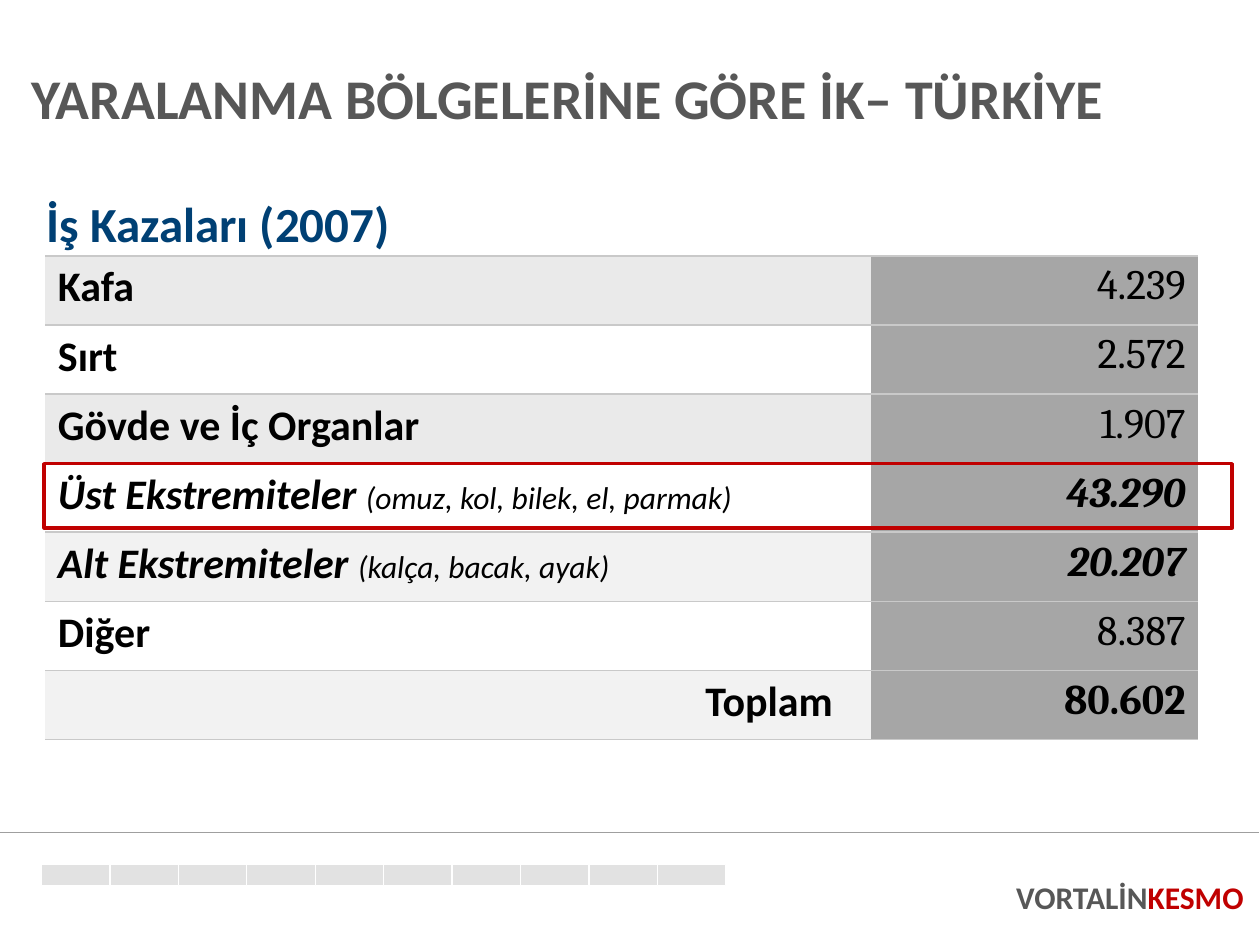
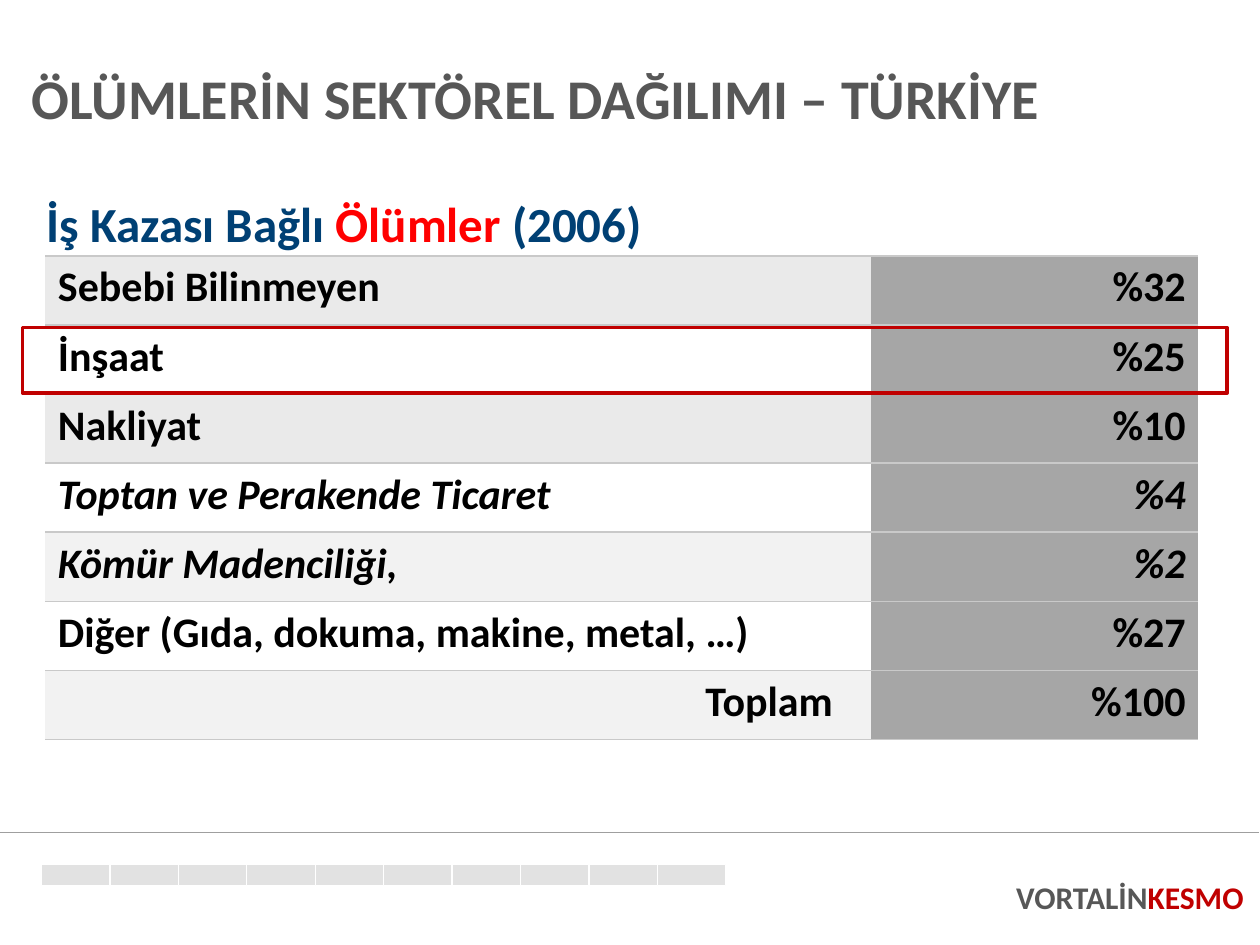
"""Builds two table slides on work accidents in Türkiye."""
from dataclasses import dataclass
from functools import partial

from lxml.etree import SubElement
from pptx import Presentation
from pptx.dml.color import RGBColor
from pptx.enum.shapes import MSO_CONNECTOR, MSO_SHAPE
from pptx.enum.text import MSO_ANCHOR, PP_ALIGN
from pptx.oxml import parse_xml
from pptx.oxml.ns import nsdecls, qn
from pptx.slide import Slide
from pptx.table import _Cell
from pptx.text.text import _Paragraph
from pptx.util import Inches, Pt


@dataclass(frozen=True)
class Theme:
    sans: str = "Calibri"
    serif: str = "Cambria"
    gray: str = "575757"
    navy: str = "004074"
    red: str = "C00000"
    bright_red: str = "FF0000"
    black: str = "000000"
    white: str = "FFFFFF"
    band: str = "EAEAEA"
    pale_band: str = "F2F2F2"
    value_fill: str = "A6A6A6"
    border: str = "C9C9C9"
    rule: str = "9F9F9F"
    block: str = "E2E2E2"
    title_size: int = 32
    heading_size: int = 28
    cell_size: int = 24
    small_size: int = 18


THEME = Theme()


@dataclass(frozen=True)
class Span:
    text: str
    size: int = THEME.cell_size
    color: str = THEME.black
    bold: bool = True
    italic: bool = False
    font: str = THEME.sans


@dataclass(frozen=True)
class Row:
    label: list[Span]
    value: Span


@dataclass(frozen=True)
class Box:
    left: float
    top: float
    width: float
    height: float

    def emu(self) -> tuple[int, ...]:
        return tuple(Inches(n) for n in (self.left, self.top, self.width, self.height))


@dataclass(frozen=True)
class TableSlide:
    title: str
    heading: list[Span]
    rows: list[Row]
    highlight: Box


TITLE_BOX = Box(0.25, 0.45, 9.64, 0.71)
HEADING_BOX = Box(0.27, 1.49, 5.19, 0.57)
TABLE_BOX = Box(0.36, 2.03, 9.15, 3.84)
SIGNATURE_BOX = Box(7.56, 6.97, 2.31, 0.56)
COLUMNS = (6.55, 2.6)
BLOCK_COUNT = 10
BLOCKS_BOX = Box(0.33, 6.86, 5.43, 0.17)
BAND_FILLS = (THEME.band, THEME.white, THEME.band, THEME.white,
              THEME.pale_band, THEME.white, THEME.pale_band)

Heading = partial(Span, size=THEME.heading_size, color=THEME.navy)
Number = partial(Span, bold=False, font=THEME.serif)
Emphasis = partial(Span, italic=True)
Detail = partial(Span, size=THEME.small_size, bold=False, italic=True)
Signature = partial(Span, size=THEME.small_size, color=THEME.gray)

SLIDES = [
    TableSlide(
        "YARALANMA BÖLGELERİNE GÖRE İK– TÜRKİYE",
        [Heading("İş Kazaları (2007)")],
        [
            Row([Span("Kafa")], Number("4.239")),
            Row([Span("Sırt")], Number("2.572")),
            Row([Span("Gövde ve İç Organlar")], Number("1.907")),
            Row([Emphasis("Üst Ekstremiteler "), Detail("(omuz, kol, bilek, el, parmak)")],
                Number("43.290", bold=True, italic=True)),
            Row([Emphasis("Alt Ekstremiteler "), Detail("(kalça, bacak, ayak)")],
                Number("20.207", bold=True, italic=True)),
            Row([Span("Diğer")], Number("8.387")),
            Row([Span("Toplam")], Number("80.602", bold=True)),
        ],
        Box(0.35, 3.68, 9.43, 0.51),
    ),
    TableSlide(
        "ÖLÜMLERİN SEKTÖREL DAĞILIMI – TÜRKİYE",
        [Heading("İş Kazası Bağlı "), Heading("Ölümler", color=THEME.bright_red),
         Heading(" (2006)")],
        [
            Row([Span("Sebebi Bilinmeyen")], Span("%32")),
            Row([Span("İnşaat")], Span("%25")),
            Row([Span("Nakliyat")], Span("%10")),
            Row([Emphasis("Toptan ve Perakende Ticaret")], Emphasis("%4")),
            Row([Emphasis("Kömür Madenciliği,")], Emphasis("%2")),
            Row([Span("Diğer (Gıda, dokuma, makine, metal, …)")], Span("%27")),
            Row([Span("Toplam")], Span("%100")),
        ],
        Box(0.18, 2.6, 9.56, 0.52),
    ),
]


def rgb(color: str) -> RGBColor:
    return RGBColor.from_string(color)


def add_runs(p: _Paragraph, spans: list[Span], align: PP_ALIGN = PP_ALIGN.LEFT) -> None:
    p.alignment = align
    for span in spans:
        r = p.add_run()
        r.text = span.text
        r.font.name = span.font
        r.font.size = Pt(span.size)
        r.font.bold = span.bold
        r.font.italic = span.italic
        r.font.color.rgb = rgb(span.color)


def add_text(s: Slide, box: Box, spans: list[Span], align: PP_ALIGN = PP_ALIGN.LEFT,
             inset: bool = True) -> None:
    tf = s.shapes.add_textbox(*box.emu()).text_frame
    tf.word_wrap = True
    if not inset:
        tf.margin_left = tf.margin_right = tf.margin_top = tf.margin_bottom = 0
    add_runs(tf.paragraphs[0], spans, align)


def add_rect(s: Slide, box: Box, fill: str | None, line: str, width: float) -> None:
    sp = s.shapes.add_shape(MSO_SHAPE.RECTANGLE, *box.emu())
    sp.shadow.inherit = False
    if fill:
        sp.fill.solid()
        sp.fill.fore_color.rgb = rgb(fill)
    else:
        sp.fill.background()
    sp.line.color.rgb = rgb(line)
    sp.line.width = Pt(width)


def add_title(s: Slide, text: str) -> None:
    sp = s.shapes.title
    sp.left, sp.top, sp.width, sp.height = TITLE_BOX.emu()
    tf = sp.text_frame
    tf.word_wrap = True
    tf.vertical_anchor = MSO_ANCHOR.MIDDLE
    tf.margin_left = tf.margin_right = 0
    p = tf.paragraphs[0]
    p.line_spacing = 0.9
    add_runs(p, [Span(text, THEME.title_size, THEME.gray)])


def add_footer(s: Slide) -> None:
    pitch = BLOCKS_BOX.width / BLOCK_COUNT
    for i in range(BLOCK_COUNT):
        block = Box(BLOCKS_BOX.left + i * pitch, BLOCKS_BOX.top, pitch, BLOCKS_BOX.height)
        add_rect(s, block, THEME.block, THEME.white, 0.75)
    rule = s.shapes.add_connector(MSO_CONNECTOR.STRAIGHT, 0, Inches(6.61),
                                  Inches(9.99), Inches(6.61))
    rule.line.color.rgb = rgb(THEME.rule)
    rule.line.width = Pt(0.75)
    SubElement(rule._element.spPr, qn("a:effectLst"))
    add_text(s, SIGNATURE_BOX, [Signature("VORTALİN"), Signature("KESMO", color=THEME.red)],
             PP_ALIGN.RIGHT, inset=False)


def style_cell(cell: _Cell, fill: str) -> None:
    cell.fill.solid()
    cell.fill.fore_color.rgb = rgb(fill)
    ruled = f'<a:solidFill><a:srgbClr val="{THEME.border}"/></a:solidFill>'
    sides = {"lnL": "<a:noFill/>", "lnR": "<a:noFill/>", "lnT": ruled, "lnB": ruled}
    tc_pr = cell._tc.get_or_add_tcPr()
    for i, (side, paint) in enumerate(sides.items()):
        tc_pr.insert(i, parse_xml(f'<a:{side} {nsdecls("a")} w="{Pt(1)}">{paint}</a:{side}>'))


def add_data_table(s: Slide, rows: list[Row]) -> None:
    table = s.shapes.add_table(len(rows), len(COLUMNS), *TABLE_BOX.emu()).table
    table.first_row = table.horz_banding = False
    for column, width in zip(table.columns, COLUMNS):
        column.width = Inches(width)
    for i, (row, fill) in enumerate(zip(rows, BAND_FILLS)):
        table.rows[i].height = Inches(TABLE_BOX.height / len(rows))
        label, value = table.cell(i, 0), table.cell(i, 1)
        style_cell(label, fill)
        style_cell(value, THEME.value_fill)
        is_total = i == len(rows) - 1
        if is_total:
            label.margin_right = Inches(0.3)
        add_runs(label.text_frame.paragraphs[0], row.label,
                 PP_ALIGN.RIGHT if is_total else PP_ALIGN.LEFT)
        add_runs(value.text_frame.paragraphs[0], [row.value], PP_ALIGN.RIGHT)


def main() -> None:
    prs = Presentation()
    prs.slide_width, prs.slide_height = Inches(10), Inches(7.5)
    title_only = prs.slide_layouts[5]
    for content in SLIDES:
        s = prs.slides.add_slide(title_only)
        add_footer(s)
        add_data_table(s, content.rows)
        add_text(s, HEADING_BOX, content.heading)
        add_title(s, content.title)
        add_rect(s, content.highlight, None, THEME.red, 2)
    prs.save("out.pptx")


if __name__ == "__main__":
    main()
